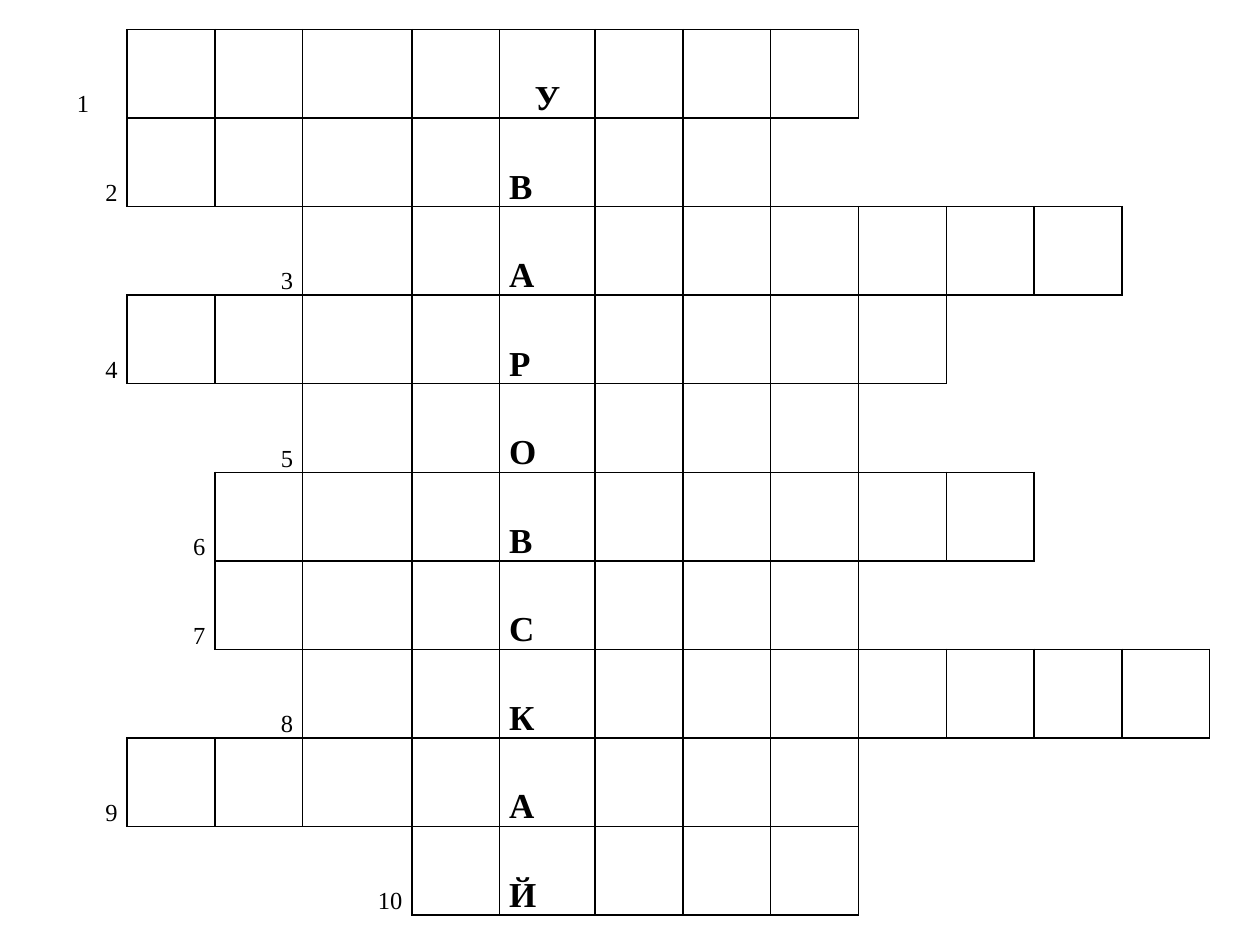
"""Build a crossword grid slide with a highlighted vertical keyword."""
from lxml import etree
from pptx import Presentation
from pptx.dml.color import RGBColor
from pptx.enum import text
from pptx.oxml import ns
from pptx.util import Pt

BLACK = RGBColor(0, 0, 0)
FONT = "Times New Roman"
KEYWORD = "УВАРОВСКАЙ"
KEY_COLUMN = 5
WORD_SPANS = [(1, 8), (1, 7), (3, 11), (1, 9), (3, 8),
              (2, 10), (2, 8), (3, 12), (1, 8), (4, 8)]
COLUMN_WIDTHS = [50.2] * 3 + [62.4, 50.2, 54.6] + [50.2] * 7
ROW_HEIGHT = 50.6
LEFT, TOP = 22.4, 16.9
SIDES = {"a:lnL": (0, -1), "a:lnR": (0, 1), "a:lnT": (-1, 0), "a:lnB": (1, 0)}


def in_word(row, column):
    if not 0 <= row < len(WORD_SPANS):
        return False
    first, last = WORD_SPANS[row]
    return first <= column <= last


def draw_borders(cell, row, column):
    properties = cell._tc.get_or_add_tcPr()
    for side, (down, across) in SIDES.items():
        border = etree.SubElement(properties, ns.qn(side), w=str(Pt(1)))
        if in_word(row, column) or in_word(row + down, column + across):
            fill = etree.SubElement(border, ns.qn("a:solidFill"))
            etree.SubElement(fill, ns.qn("a:srgbClr"), val=str(BLACK))
        else:
            etree.SubElement(border, ns.qn("a:noFill"))


def write(cell, content, size, bold, alignment):
    paragraph = cell.text_frame.paragraphs[0]
    paragraph.alignment = alignment
    paragraph.line_spacing = 1.15
    paragraph.space_after = Pt(10)
    run = paragraph.add_run()
    run.text = content
    run.font.name = FONT
    run.font.size = Pt(size)
    run.font.bold = bold
    run.font.color.rgb = BLACK


def main():
    deck = Presentation()
    deck.slide_width, deck.slide_height = Pt(720), Pt(540)
    slide = deck.slides.add_slide(deck.slide_layouts[6])
    rows, columns = len(WORD_SPANS), len(COLUMN_WIDTHS)
    crossword = slide.shapes.add_table(
        rows, columns, Pt(LEFT), Pt(TOP),
        Pt(sum(COLUMN_WIDTHS)), Pt(rows * ROW_HEIGHT)).table
    crossword.first_row = crossword.horz_banding = False
    for column, width in enumerate(COLUMN_WIDTHS):
        crossword.columns[column].width = Pt(width)

    for row, (first, _) in enumerate(WORD_SPANS):
        crossword.rows[row].height = Pt(ROW_HEIGHT)
        for column in range(columns):
            cell = crossword.cell(row, column)
            draw_borders(cell, row, column)
            cell.fill.background()
            cell.vertical_anchor = text.MSO_ANCHOR.BOTTOM
            cell.margin_left = cell.margin_right = Pt(5.4)
            cell.margin_top = cell.margin_bottom = Pt(0)
        align = text.PP_ALIGN
        number_align, letter_align = (
            (align.CENTER, align.CENTER) if row == 0 else (align.RIGHT, align.LEFT))
        write(crossword.cell(row, first - 1), str(row + 1), 14, False, number_align)
        write(crossword.cell(row, KEY_COLUMN), KEYWORD[row], 20, True, letter_align)

    deck.save("out.pptx")


if __name__ == "__main__":
    main()
